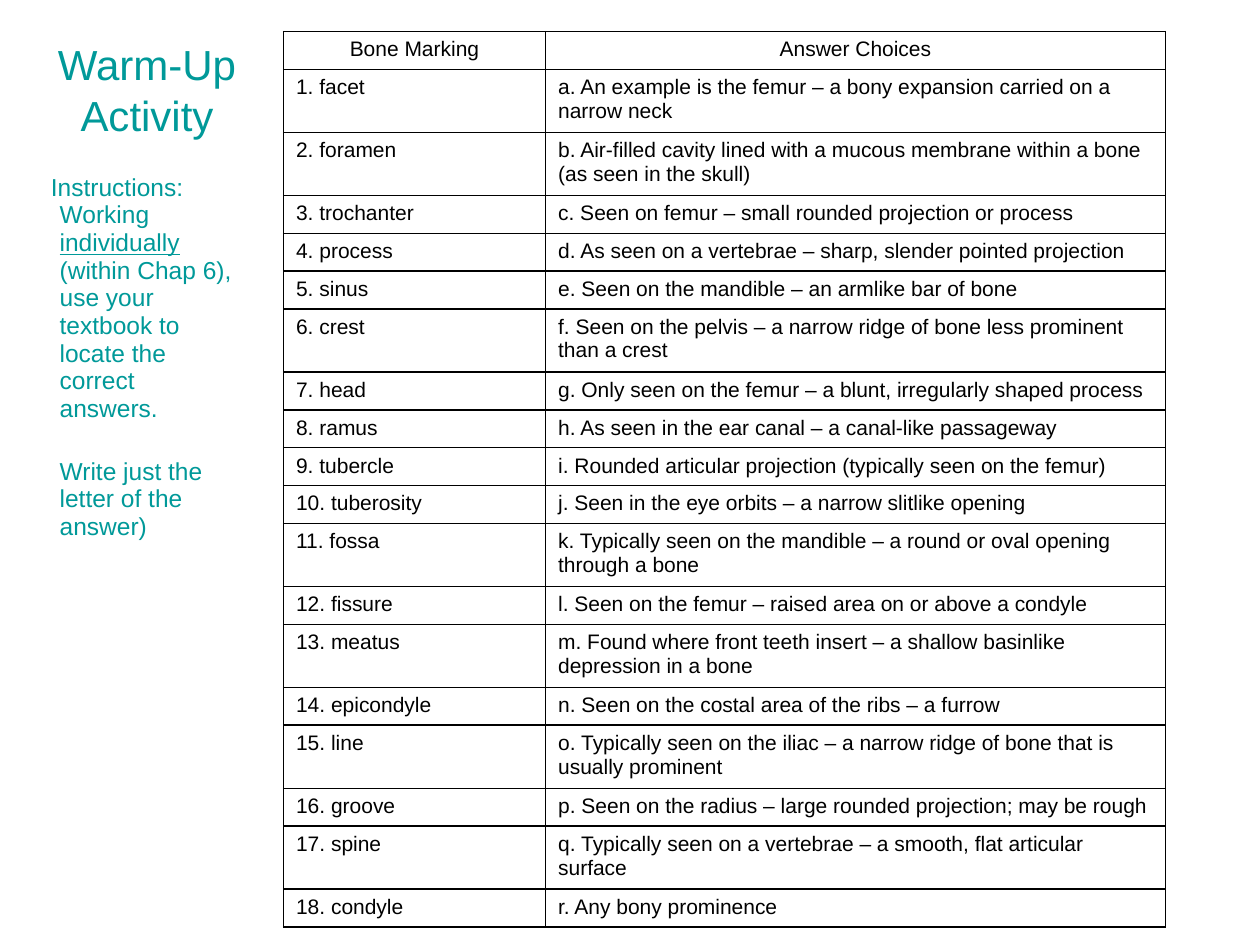
from lxml.etree import SubElement
from pptx import Presentation
from pptx.dml.color import RGBColor
from pptx.enum.text import MSO_ANCHOR as Anchor, PP_ALIGN as Align
from pptx.oxml.ns import qn
from pptx.util import Pt

COLORS = {"teal": "009999", "black": "000000"}
FONT = "Arial"
HEADINGS = ("Bone Marking", "Answer Choices")
QUIZ = [
    ("facet", "An example is the femur – a bony expansion carried on a narrow neck"),
    ("foramen", "Air-filled cavity lined with a mucous membrane within a bone (as seen in the skull)"),
    ("trochanter", "Seen on femur – small rounded projection or process"),
    ("process", "As seen on a vertebrae – sharp, slender pointed projection"),
    ("sinus", "Seen on the mandible – an armlike bar of bone"),
    ("crest", "Seen on the pelvis – a narrow ridge of bone less prominent than a crest"),
    ("head", "Only seen on the femur – a blunt, irregularly shaped process"),
    ("ramus", "As seen in the ear canal – a canal-like passageway"),
    ("tubercle", "Rounded articular projection (typically seen on the femur)"),
    ("tuberosity", "Seen in the eye orbits – a narrow slitlike opening"),
    ("fossa", "Typically seen on the mandible – a round or oval opening through a bone"),
    ("fissure", "Seen on the femur – raised area on or above a condyle"),
    ("meatus", "Found where front teeth insert – a shallow basinlike depression in a bone"),
    ("epicondyle", "Seen on the costal area of the ribs – a furrow"),
    ("line", "Typically seen on the iliac – a narrow ridge of bone that is usually prominent"),
    ("groove", "Seen on the radius – large rounded projection; may be rough"),
    ("spine", "Typically seen on a vertebrae – a smooth, flat articular surface"),
    ("condyle", "Any bony prominence"),
]
COLUMN_WIDTHS = (149.76, 354.24)
ROW_HEIGHT, TALL_ROW_HEIGHT = 21.6, 35.2
ONE_LINE_LIMIT = 65


def style(paragraph, size, color, align=Align.LEFT):
    paragraph.alignment = align
    font = paragraph.font
    font.name, font.size = FONT, Pt(size)
    font.color.rgb = RGBColor.from_string(COLORS[color])


def add_text_frame(slide, left, top, width, height, anchor=Anchor.TOP):
    box = slide.shapes.add_textbox(Pt(left), Pt(top), Pt(width), Pt(height))
    box.text_frame.word_wrap = True
    box.text_frame.vertical_anchor = anchor
    return box.text_frame


def add_title(slide):
    title = add_text_frame(slide, 24, 30, 120, 42, Anchor.MIDDLE).paragraphs[0]
    title.text = "Warm-Up Activity"
    style(title, 24, "teal", Align.CENTER)


def add_instructions(slide):
    frame = add_text_frame(slide, 0, 96, 144, 84)
    task, reminder = frame.paragraphs[0], frame.add_paragraph()
    task.add_run().text = "Instructions: Working "
    emphasis = task.add_run()
    emphasis.text = "individually"
    emphasis.font.underline = True
    task.add_run().text = " (within Chap 6), use your textbook to locate the correct answers."
    reminder.text = "Write just the letter of the answer)"
    for paragraph, indent, gap in ((task, -5, 3), (reminder, 0, 20)):
        style(paragraph, 14, "teal")
        paragraph.line_spacing = 0.94
        paragraph.space_before = Pt(gap)
        properties = paragraph._p.get_or_add_pPr()
        properties.set("marL", str(Pt(27)))
        properties.set("indent", str(Pt(indent)))


def add_borders(cell):
    properties = cell._tc.get_or_add_tcPr()
    for position, side in enumerate(("a:lnL", "a:lnR", "a:lnT", "a:lnB")):
        line = SubElement(properties, qn(side), w=str(Pt(1)))
        fill = SubElement(line, qn("a:solidFill"))
        SubElement(fill, qn("a:srgbClr"), val=COLORS["black"])
        properties.insert(position, line)


def add_quiz_table(slide):
    rows = [HEADINGS] + [
        (f"{number}. {bone}", f"{chr(96 + number)}. {answer}")
        for number, (bone, answer) in enumerate(QUIZ, 1)
    ]
    heights = [
        TALL_ROW_HEIGHT if len(answer) > ONE_LINE_LIMIT else ROW_HEIGHT
        for _, answer in rows
    ]
    table = slide.shapes.add_table(
        len(rows), len(HEADINGS), Pt(162), Pt(18),
        Pt(sum(COLUMN_WIDTHS)), Pt(sum(heights)),
    ).table
    table.first_row = table.horz_banding = False
    for column, width in zip(table.columns, COLUMN_WIDTHS):
        column.width = Pt(width)
    for row, height, texts in zip(table.rows, heights, rows):
        row.height = Pt(height)
        for cell, text in zip(row.cells, texts):
            cell.text = text
            align = Align.CENTER if texts is HEADINGS else Align.LEFT
            style(cell.text_frame.paragraphs[0], 12, "black", align)
            cell.fill.background()
            add_borders(cell)


def main():
    deck = Presentation()
    deck.slide_width, deck.slide_height = Pt(720), Pt(540)
    slide = deck.slides.add_slide(deck.slide_layouts[6])
    add_title(slide)
    add_instructions(slide)
    add_quiz_table(slide)
    deck.save("out.pptx")


if __name__ == "__main__":
    main()
